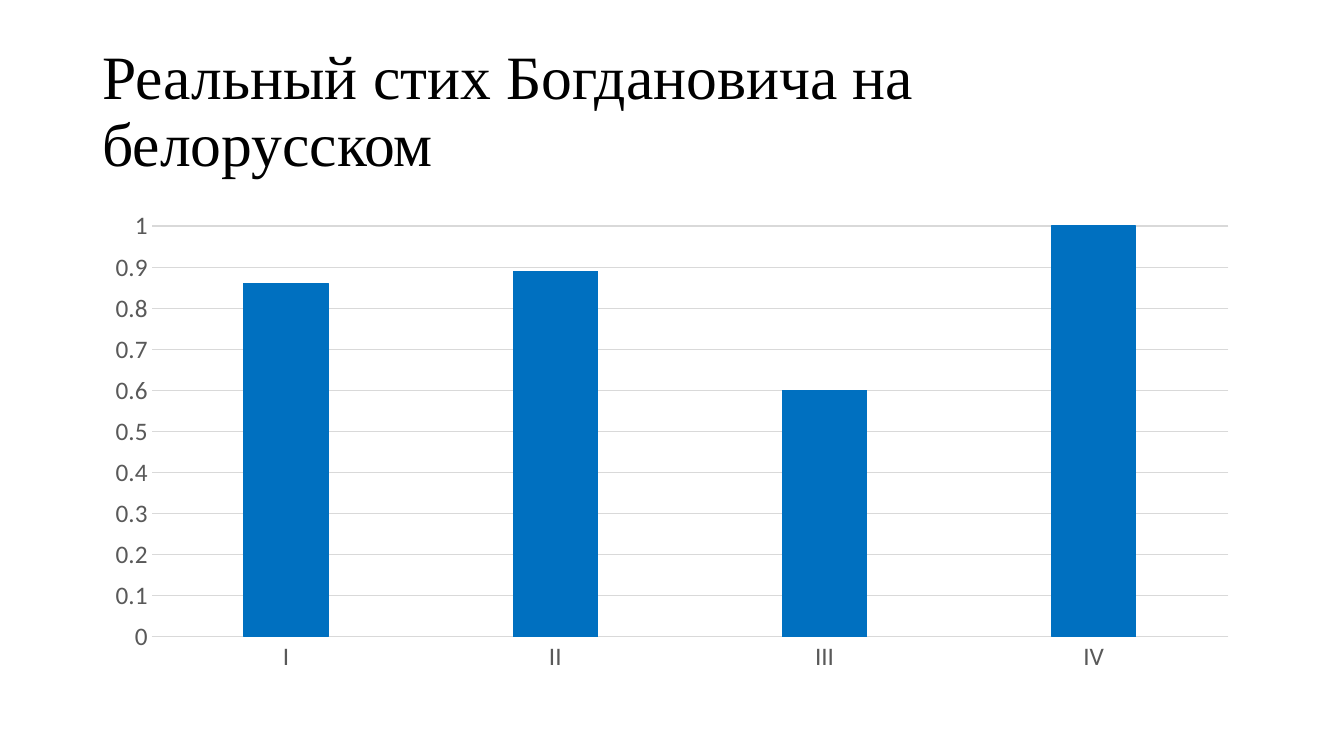
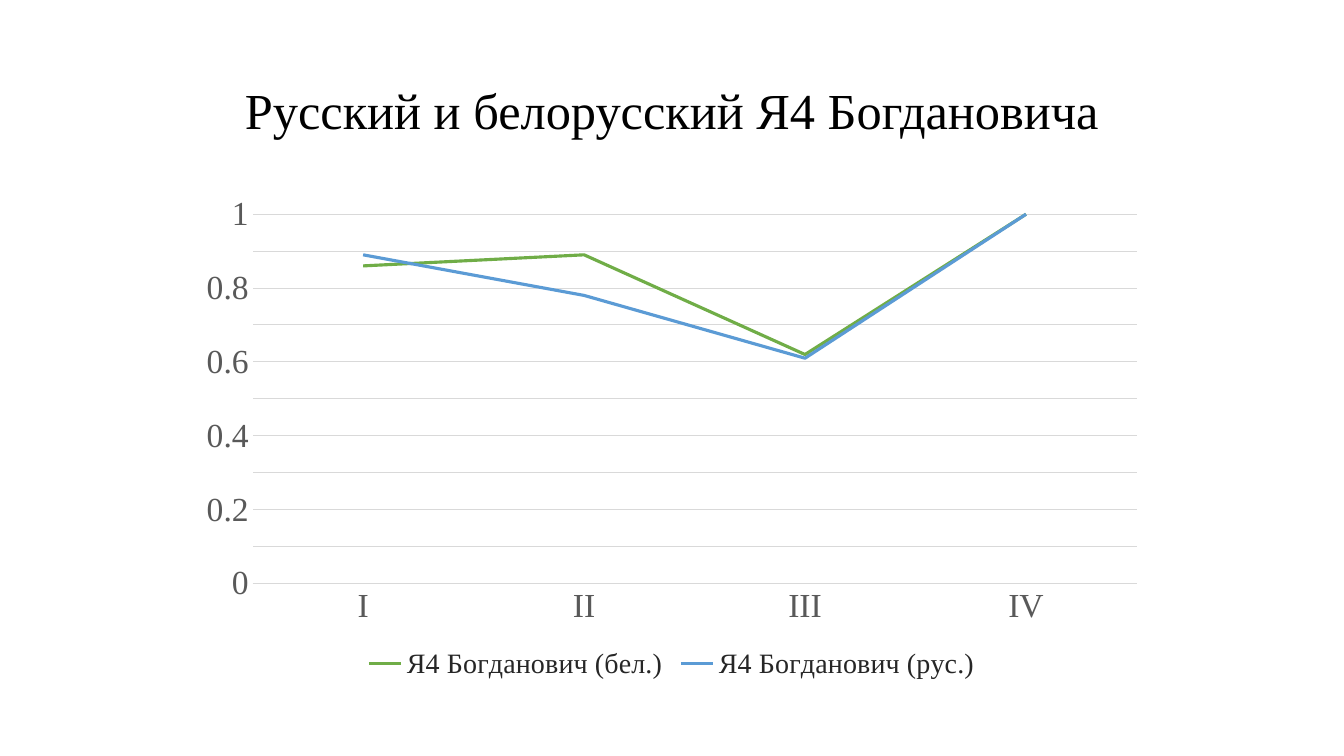
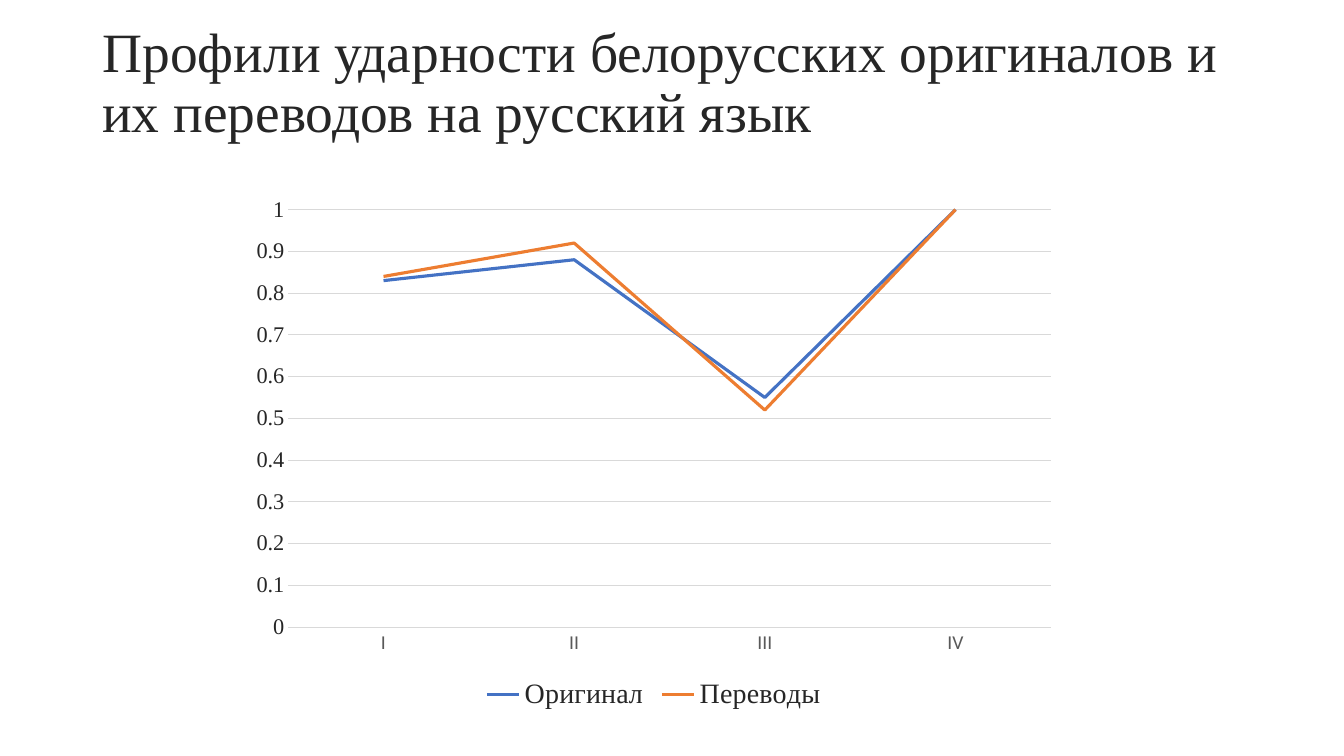
from pptx import Presentation
from pptx.chart.data import CategoryChartData
from pptx.dml.color import RGBColor
from pptx.enum.chart import XL_CHART_TYPE, XL_LEGEND_POSITION, XL_TICK_MARK
from pptx.enum.text import MSO_ANCHOR, PP_ALIGN
from pptx.util import Cm, Pt

COLUMN = XL_CHART_TYPE.COLUMN_CLUSTERED
LINE = XL_CHART_TYPE.LINE
LEGEND_BOTTOM = XL_LEGEND_POSITION.BOTTOM
NO_TICK = XL_TICK_MARK.NONE
MIDDLE = MSO_ANCHOR.MIDDLE
LEFT = PP_ALIGN.LEFT
CENTER = PP_ALIGN.CENTER

SERIF = "Times New Roman"
SANS = "Calibri"
BLACK = "000000"
DARK = "262626"
GRAY = "595959"
GRID = "D9D9D9"
FEET = ("I", "II", "III", "IV")
MARGIN_LEFT = 2.33
CONTENT_WIDTH = 29.21


def rgb(value):
    return RGBColor.from_string(value)


def style_font(font, name, size, color):
    font.name = name
    font.size = Pt(size)
    font.color.rgb = rgb(color)


def style_line(line, color, width=0.75):
    line.color.rgb = rgb(color)
    line.width = Pt(width)


def add_text(slide, text, left, top, width, height, *, font=SERIF, size=44,
             color=BLACK, align=LEFT):
    box = slide.shapes.add_textbox(Cm(left), Cm(top), Cm(width), Cm(height))
    frame = box.text_frame
    frame.word_wrap = True
    frame.vertical_anchor = MIDDLE
    paragraph = frame.paragraphs[0]
    paragraph.alignment = align
    paragraph.line_spacing = 0.9
    run = paragraph.add_run()
    run.text = text
    style_font(run.font, font, size, color)


def add_title(slide, text, top=1.01, **text_format):
    add_text(slide, text, MARGIN_LEFT, top, CONTENT_WIDTH, 3.68, **text_format)


def style_axes(chart, category_font, value_font):
    category_axis, value_axis = chart.category_axis, chart.value_axis
    for axis, font in ((category_axis, category_font), (value_axis, value_font)):
        axis.major_tick_mark = NO_TICK
        axis.minor_tick_mark = NO_TICK
        style_font(axis.tick_labels.font, *font)
    style_line(category_axis.format.line, GRID)
    value_axis.format.line.fill.background()
    value_axis.minimum_scale = 0
    value_axis.maximum_scale = 1
    value_axis.major_unit = 0.1
    value_axis.has_major_gridlines = True
    style_line(value_axis.major_gridlines.format.line, GRID)


def add_profile_chart(slide, kind, series, left, top, width, height,
                      category_font, value_font):
    data = CategoryChartData(number_format="General")
    data.categories = FEET
    for name, values, _ in series:
        data.add_series(name, values)
    chart = slide.shapes.add_chart(
        kind, Cm(left), Cm(top), Cm(width), Cm(height), data).chart
    name, size, _ = category_font
    style_font(chart.font, name, size, BLACK)
    chart.has_title = False
    chart.has_legend = False
    chart.plots[0].vary_by_categories = False
    style_axes(chart, category_font, value_font)
    return chart


def add_columns(slide, series, *position, font):
    chart = add_profile_chart(slide, COLUMN, series, *position, font, font)
    plot = chart.plots[0]
    plot.gap_width = 219
    plot.overlap = -27
    for column, (_, _, color) in zip(plot.series, series):
        column.format.fill.solid()
        column.format.fill.fore_color.rgb = rgb(color)
        style_line(column.format.line, color)


def add_lines(slide, series, *position, category_font, value_font):
    chart = add_profile_chart(slide, LINE, series, *position,
                              category_font, value_font)
    chart.has_legend = True
    chart.legend.position = LEGEND_BOTTOM
    chart.legend.include_in_layout = False
    style_font(chart.legend.font, SERIF, 20, DARK)
    for line, (_, _, color) in zip(chart.plots[0].series, series):
        line.smooth = False
        style_line(line.format.line, color, 2.25)


def main():
    presentation = Presentation()
    presentation.slide_width = Cm(33.87)
    presentation.slide_height = Cm(19.05)
    blank = presentation.slide_layouts[6]

    slide = presentation.slides.add_slide(blank)
    add_title(slide, "Реальный стих Богдановича на белорусском")
    add_columns(
        slide, [("Series 1", (0.86, 0.89, 0.6, 1), "0070C0")],
        MARGIN_LEFT, 5.07, CONTENT_WIDTH, 12.09, font=(SANS, 18, GRAY))

    slide = presentation.slides.add_slide(blank)
    add_title(slide, "Русский и белорусский Я4 Богдановича",
              size=36, align=CENTER)
    add_lines(
        slide, [("Я4 Богданович (бел.)", (0.86, 0.89, 0.62, 1), "70AD47"),
                ("Я4 Богданович (рус.)", (0.89, 0.78, 0.61, 1), "5B9BD5")],
        4.72, 4.67, 24.41, 12.6,
        category_font=(SERIF, 24, GRAY), value_font=(SERIF, 24, GRAY))

    slide = presentation.slides.add_slide(blank)
    add_title(slide, "Профили ударности белорусских оригиналов и "
              "их переводов на русский язык", top=0.29, size=39.6, color=DARK)
    add_lines(
        slide, [("Оригинал", (0.83, 0.88, 0.55, 1), "4472C4"),
                ("Переводы", (0.84, 0.92, 0.52, 1), "ED7D31")],
        6.05, 4.7, 20.85, 13.34,
        category_font=(SANS, 14, GRAY), value_font=(SERIF, 16, DARK))

    presentation.save("out.pptx")


if __name__ == "__main__":
    main()
